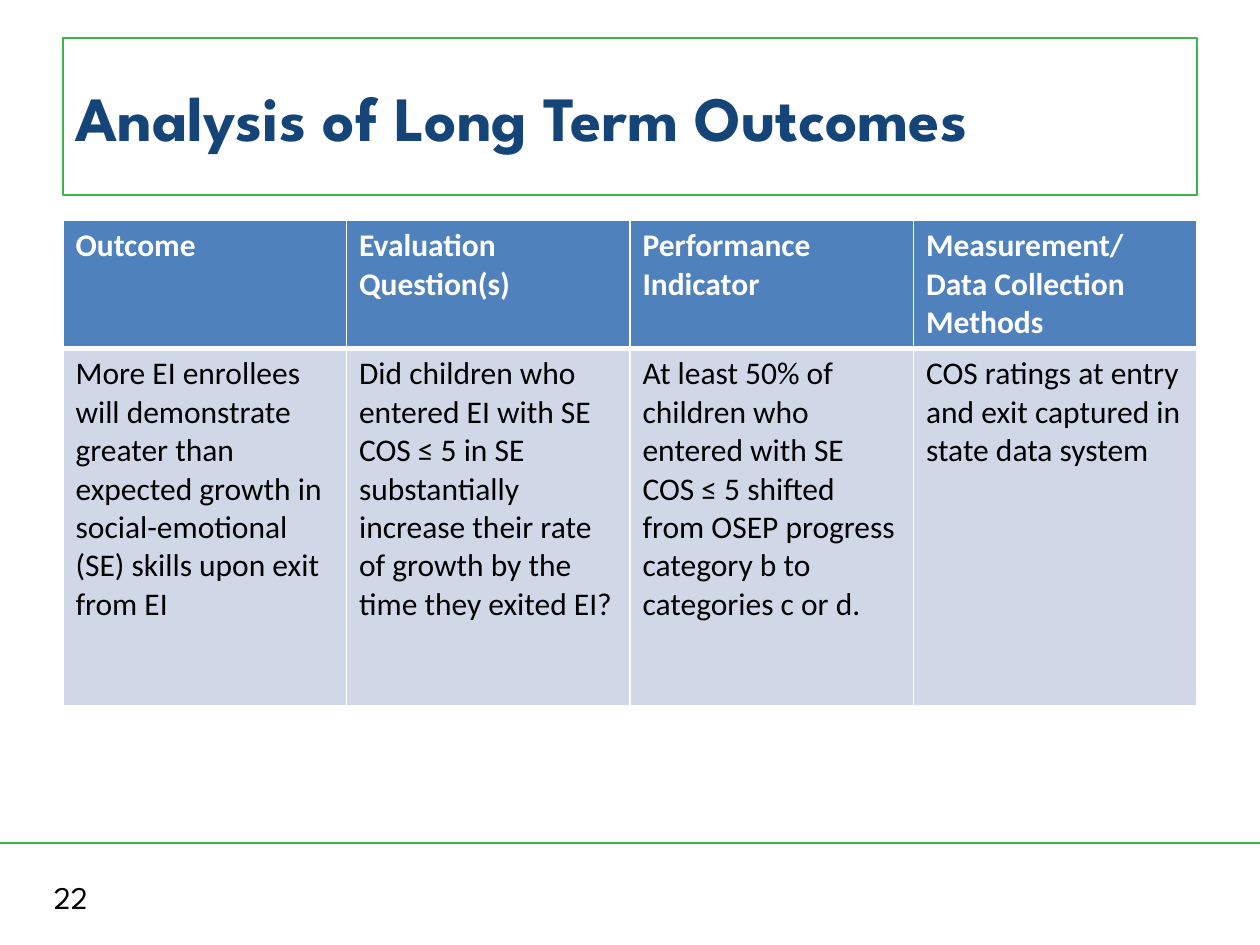
import pptx
import pptx.dml.color
import pptx.enum.shapes
import pptx.enum.text
import pptx.oxml
import pptx.oxml.ns
import pptx.util

COLORS = {
    "green": "39B54A",
    "navy": "154578",
    "header": "4F81BD",
    "body": "D0D8E8",
    "white": "FFFFFF",
    "black": "000000",
}
HEADING_FONT = "League Spartan"
TABLE_FONT = "Calibri"
GRID_COLUMNS, GRID_ROWS = 40, 30
HEADERS = [
    "Outcome",
    "Evaluation Question(s)",
    "Performance Indicator",
    "Measurement/ Data Collection Methods",
]
DETAILS = [
    "More EI enrollees will demonstrate greater than expected growth in "
    "social-emotional (SE) skills upon exit from EI",
    "Did children who entered EI with SE COS ≤ 5 in SE substantially "
    "increase their rate of growth by the time they exited EI?",
    "At least 50% of children who entered with SE COS ≤ 5 shifted from "
    "OSEP progress category b to categories c or d.",
    "COS ratings at entry and exit captured in state data system",
]


def rgb(name):
    return pptx.dml.color.RGBColor.from_string(COLORS[name])


class SlideBuilder:
    """Holds the style and current slide; lengths are grid columns and rows."""

    def __init__(self, presentation):
        self.column = presentation.slide_width / GRID_COLUMNS
        self.row = presentation.slide_height / GRID_ROWS
        self.slide = presentation.slides.add_slide(presentation.slide_layouts[5])

    def box(self, left, top, width, height):
        return (round(left * self.column), round(top * self.row),
                round(width * self.column), round(height * self.row))

    def add_text(self, text_frame, text, size, font, color, bold=False):
        text_frame.word_wrap = True
        paragraph = text_frame.paragraphs[0]
        paragraph.alignment = pptx.enum.text.PP_ALIGN.LEFT
        run = paragraph.add_run()
        run.text = text
        run.font.size = pptx.util.Pt(size)
        run.font.name = font
        run.font.bold = bold
        run.font.color.rgb = rgb(color)

    def title(self, text, *area):
        shape = self.slide.shapes.title
        shape.left, shape.top, shape.width, shape.height = self.box(*area)
        shape.line.color.rgb = rgb("green")
        shape.line.width = pptx.util.Pt(1)
        shape.text_frame.auto_size = pptx.enum.text.MSO_AUTO_SIZE.NONE
        shape.text_frame.vertical_anchor = pptx.enum.text.MSO_ANCHOR.MIDDLE
        self.add_text(shape.text_frame, text, 36, HEADING_FONT, "navy", True)

    def rule(self, row):
        """Draw a line across the whole slide."""
        left, top, width, _ = self.box(0, row, GRID_COLUMNS, 0)
        connector = self.slide.shapes.add_connector(
            pptx.enum.shapes.MSO_CONNECTOR.STRAIGHT, left, top, left + width, top)
        connector.line.color.rgb = rgb("green")
        connector.line.width = pptx.util.Pt(1.5)
        connector._element.spPr.append(pptx.oxml.parse_xml(
            f"<a:effectLst {pptx.oxml.ns.nsdecls('a')}/>"))

    def page_number(self, text, *area):
        shape = self.slide.shapes.add_textbox(*self.box(*area))
        self.add_text(shape.text_frame, text, 18, HEADING_FONT, "black")

    def borders(self, cell, **widths):
        """Give the cell white borders of the given point widths."""
        properties = cell._tc.get_or_add_tcPr()
        for position, side in enumerate("LRTB"):
            width = pptx.util.Pt(widths.get(side, 1))
            properties.insert(position, pptx.oxml.parse_xml(
                f"<a:ln{side} {pptx.oxml.ns.nsdecls('a')} w='{width}'><a:solidFill>"
                f"<a:srgbClr val='{COLORS['white']}'/></a:solidFill></a:ln{side}>"))

    def table(self, left, top, width, row_heights):
        shape = self.slide.shapes.add_table(
            2, len(HEADERS), *self.box(left, top, width, sum(row_heights)))
        table = shape.table
        for table_row, height in zip(table.rows, row_heights):
            table_row.height = round(height * self.row)
        styles = [
            (HEADERS, "header", "white", True, {"B": 3}),
            (DETAILS, "body", "black", False, {"T": 3}),
        ]
        for row, (texts, fill, color, bold, widths) in enumerate(styles):
            for column, text in enumerate(texts):
                cell = table.cell(row, column)
                cell.fill.solid()
                cell.fill.fore_color.rgb = rgb(fill)
                self.borders(cell, **widths)
                self.add_text(cell.text_frame, text, 18, TABLE_FONT, color, bold)


def main():
    presentation = pptx.Presentation()
    presentation.slide_width = pptx.util.Inches(10)
    presentation.slide_height = pptx.util.Inches(7.5)
    builder = SlideBuilder(presentation)
    builder.rule(26.76)
    builder.page_number("22", 1.32, 27.68, 9.32, 1.6)
    builder.title("Analysis of Long Term Outcomes", 2, 1.2, 36, 5)
    builder.table(2, 7, 36, [4.06, 11.36])
    presentation.save("out.pptx")


if __name__ == "__main__":
    main()
